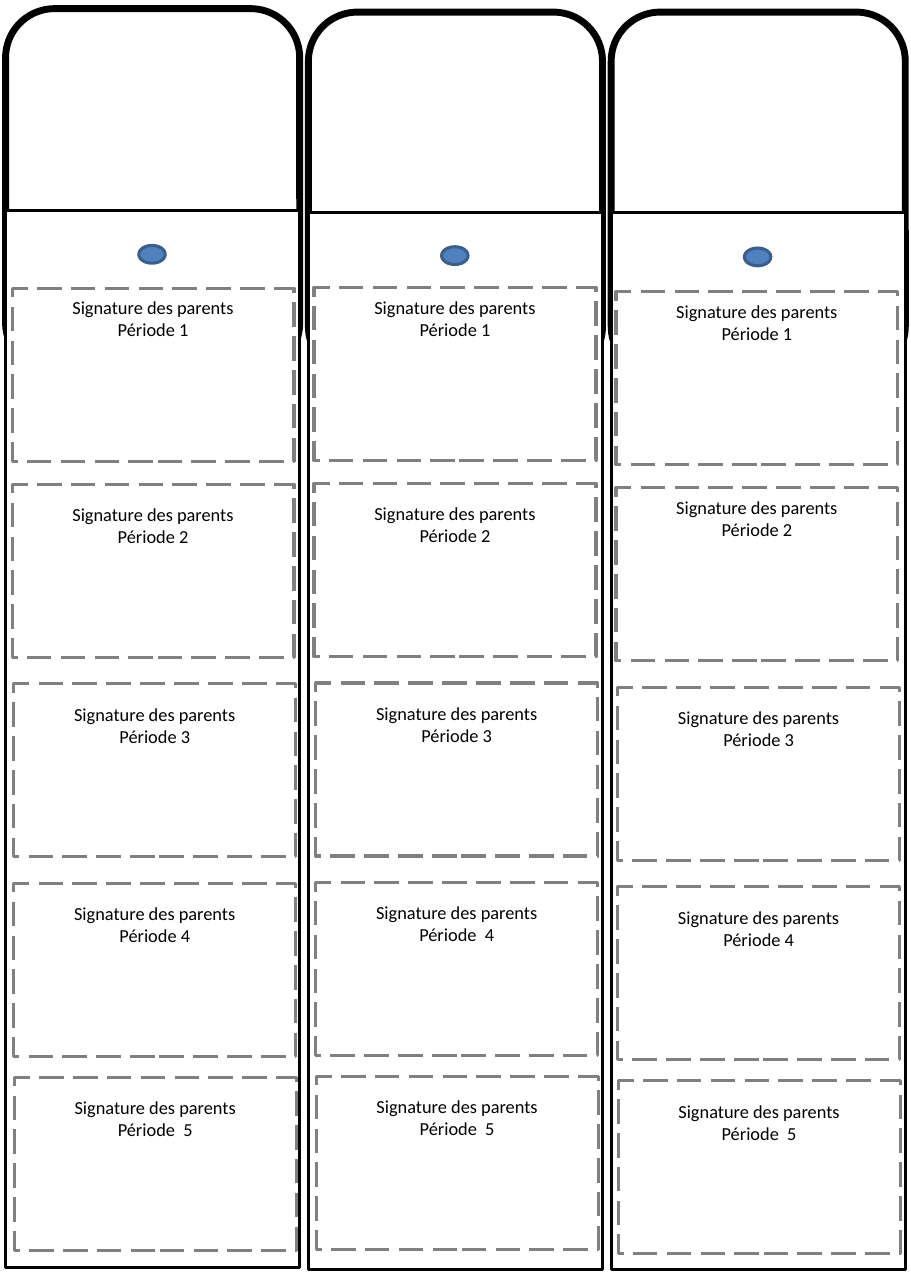
import pptx
import pptx.util
import pptx.dml.color
import pptx.enum.dml
import pptx.enum.shapes
import pptx.enum.text

Cm = pptx.util.Cm
Pt = pptx.util.Pt
RGBColor = pptx.dml.color.RGBColor
KIND = pptx.enum.shapes.MSO_SHAPE

WHITE = RGBColor(0xFF, 0xFF, 0xFF)
BLACK = RGBColor(0, 0, 0)
GREY = RGBColor(0x80, 0x80, 0x80)
BLUE = RGBColor(0x4F, 0x81, 0xBD)
NAVY = RGBColor(0x3A, 0x5F, 0x8C)

deck = pptx.Presentation()
deck.slide_width = Cm(21)
deck.slide_height = Cm(29.7)
slide = deck.slides.add_slide(deck.slide_layouts[6])


def draw(kind, left, top, width, height, fill, line, weight):
    shape = slide.shapes.add_shape(kind, Cm(left), Cm(top), Cm(width), Cm(height))
    shape.shadow.inherit = False
    shape.fill.solid()
    shape.fill.fore_color.rgb = fill
    shape.line.color.rgb = line
    shape.line.width = Pt(weight)
    return shape


# Tops of the tab, strip, hole and first box of each bookmark
marks = [
    (0.2, 4.85, 5.66, 6.65),
    (0.28, 4.9, 5.69, 6.63),
    (0.28, 4.9, 5.72, 6.73),
]
# Offset of each signature box from the first one
steps = [(0, 0), (0, 4.52), (0.04, 9.12), (0.04, 13.72), (0.05, 18.19)]

for col, (tab, strip, hole, first) in enumerate(marks):
    # Bookmark body
    left = 0.13 + 6.98 * col
    draw(KIND.ROUNDED_RECTANGLE, left, tab, 6.78, 8.38, WHITE, BLACK, 4.5)
    draw(KIND.RECTANGLE, left, strip, 6.78, 24.38, WHITE, BLACK, 2)
    draw(KIND.OVAL, left + 3.07, hole, 0.61, 0.41, BLUE, NAVY, 2)

    # Signature boxes
    for row, (right, down) in enumerate(steps):
        box = draw(KIND.RECTANGLE, 0.28 + 6.96 * col + right, first + down,
                   6.5, 3.99, WHITE, GREY, 2)
        box.line.dash_style = pptx.enum.dml.MSO_LINE.LONG_DASH
        wide = (col, row) == (1, 3) or row == 4
        gap = "  " if wide else " "
        high = row == 0 or (col, row) == (2, 1)
        frame = box.text_frame
        frame.vertical_anchor = pptx.enum.text.MSO_ANCHOR.TOP
        frame.margin_top = Cm(0.19 if high else 0.44)
        frame.text = f"Signature des parents\nPériode{gap}{row + 1}"
        for para in frame.paragraphs:
            para.alignment = pptx.enum.text.PP_ALIGN.CENTER
            font = para.runs[0].font
            font.name = "Calibri"
            font.size = Pt(12)
            font.color.rgb = BLACK

deck.save("out.pptx")
